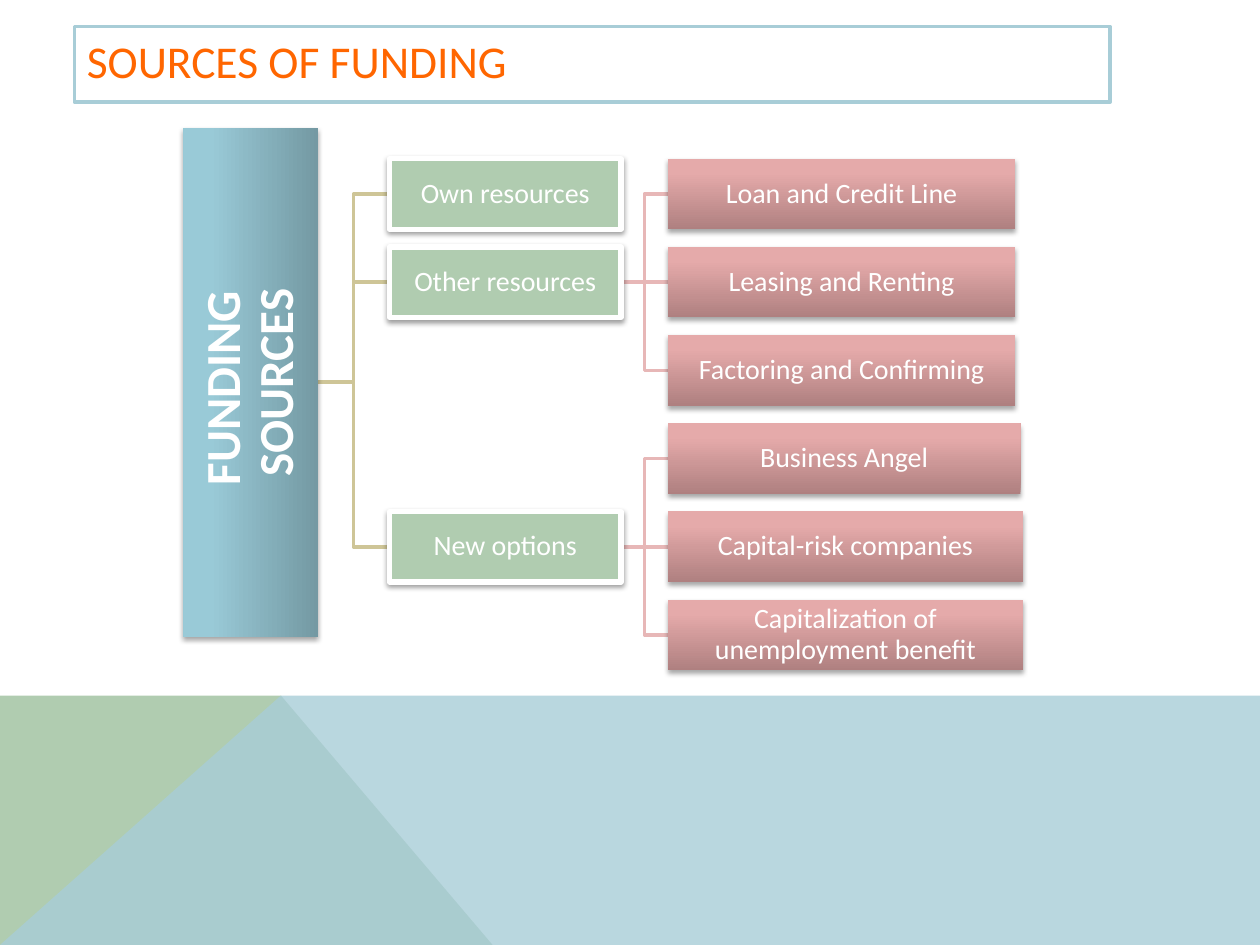
from dataclasses import dataclass

import lxml.etree
import pptx
import pptx.dml.color
import pptx.enum.shapes
import pptx.enum.text
import pptx.oxml
import pptx.oxml.ns
import pptx.util

Inches = pptx.util.Inches
Pt = pptx.util.Pt
qn = pptx.oxml.ns.qn
RECT = pptx.enum.shapes.MSO_SHAPE.RECTANGLE
LINK = pptx.enum.shapes.MSO_CONNECTOR
ALIGN = pptx.enum.text.PP_ALIGN
Stops = tuple[tuple[int, str], ...]


@dataclass(frozen=True)
class Theme:
    font: str = "Calibri"
    white: str = "FFFFFF"
    orange: str = "FF6600"
    green: str = "B0CCB0"
    blue: str = "A8CDD7"
    tan: str = "CEC597"
    pink: str = "E7B7B7"
    teal: Stops = ((0, "7499A3"), (80, "99CAD7"), (100, "99CBD9"))
    rose: Stops = ((0, "AF8080"), (80, "E5AAAA"), (100, "E8A8A8"))
    title: int = 26
    root: int = 28
    body: int = 16
    line: int = 2


@dataclass(frozen=True)
class Box:
    text: str
    row: int
    width: float


@dataclass(frozen=True)
class Group:
    box: Box
    leaves: tuple[Box, ...] = ()


THEME = Theme()
# Columns and rows of the tree
ROOT_END, ROOT_MID = 2.52, 3.03
MID_LEFT, MID_WIDTH, LEAF_LEFT = 3.09, 1.84, 5.3
TOP, STEP, HEIGHT = 1.26, 0.7, 0.56

GROUPS = (
    Group(Box("Own resources", 0, MID_WIDTH)),
    Group(Box("Other resources", 1, MID_WIDTH), (
        Box("Loan and Credit Line", 0, 2.76),
        Box("Leasing and Renting", 1, 2.76),
        Box("Factoring and Confirming", 2, 2.76))),
    Group(Box("New options", 4, MID_WIDTH), (
        Box("Business Angel", 3, 2.8),
        Box("Capital-risk companies", 4, 2.82),
        Box("Capitalization of unemployment benefit", 5, 2.82))),
)


def color(code: str) -> pptx.dml.color.RGBColor:
    return pptx.dml.color.RGBColor.from_string(code)


def paint(shape, code: str) -> None:
    shape.fill.solid()
    shape.fill.fore_color.rgb = color(code)


def blend(shape, stops: Stops) -> None:
    """Fill with a gradient that runs from bottom to top."""
    shape.fill.gradient()
    shape.fill.gradient_angle = 90
    store = shape.fill._xPr.find(".//" + qn("a:gsLst"))
    for old in list(store):
        store.remove(old)
    for pos, code in stops:
        stop = lxml.etree.SubElement(store, qn("a:gs"), pos=str(pos * 1000))
        lxml.etree.SubElement(stop, qn("a:srgbClr"), val=code)


def shade(shape, alpha: int, dist: float) -> None:
    """Add a soft shadow straight below."""
    shape.shadow.inherit = False
    store = shape._element.spPr.find(qn("a:effectLst"))
    drop = lxml.etree.SubElement(
        store, qn("a:outerShdw"), blurRad=str(Pt(3.1)), dist=str(Pt(dist)),
        dir="5400000", rotWithShape="0")
    tone = lxml.etree.SubElement(drop, qn("a:srgbClr"), val="000000")
    lxml.etree.SubElement(tone, qn("a:alpha"), val=str(alpha * 1000))


def write(shape, text: str, size: int, code: str, inset: float,
          bold: bool = False) -> None:
    frame = shape.text_frame
    frame.word_wrap = True
    frame.vertical_anchor = pptx.enum.text.MSO_ANCHOR.MIDDLE
    frame.margin_left = frame.margin_right = Inches(inset)
    frame.margin_top = frame.margin_bottom = Inches(min(inset, 0.05))
    para = frame.paragraphs[0]
    para.text = text
    para.alignment = ALIGN.CENTER
    para.line_spacing = 0.9
    for run in para.runs:
        run.font.name = THEME.font
        run.font.size = Pt(size)
        run.font.bold = bold
        run.font.color.rgb = color(code)


def block(shapes, left: float, top: float, width: float, height: float):
    shape = shapes.add_shape(
        RECT, Inches(left), Inches(top), Inches(width), Inches(height))
    shape.shadow.inherit = False
    shape.line.fill.background()
    return shape


def patch(shapes, points: list[tuple[float, float]], code: str):
    spots = [(Inches(x), Inches(y)) for x, y in points]
    pen = shapes.build_freeform(*spots[0])
    pen.add_line_segments(spots[1:], close=True)
    shape = pen.convert_to_shape()
    shape.shadow.inherit = False
    shape.line.fill.background()
    paint(shape, code)
    return shape


def row_top(row: int) -> float:
    return TOP + STEP * row


def row_mid(row: int) -> float:
    return row_top(row) + HEIGHT / 2


def join(shapes, x1: float, y1: float, x2: float, y2: float,
         code: str) -> None:
    kind = LINK.STRAIGHT if abs(y1 - y2) < 0.01 else LINK.ELBOW
    link = shapes.add_connector(
        kind, Inches(x1), Inches(y1), Inches(x2), Inches(y2))
    link.line.color.rgb = color(code)
    link.line.width = Pt(THEME.line)
    lxml.etree.SubElement(link._element.spPr, qn("a:effectLst"))


def draw_mid(shapes, box: Box) -> None:
    shape = block(shapes, MID_LEFT, row_top(box.row), box.width, HEIGHT)
    paint(shape, THEME.green)
    shape.line.color.rgb = color(THEME.white)
    shape.line.width = Pt(3)
    shade(shape, 38, 1.6)
    write(shape, box.text, THEME.body, THEME.white, 0.01)


def draw_leaf(shapes, box: Box) -> None:
    shape = block(shapes, LEAF_LEFT, row_top(box.row), box.width, HEIGHT)
    blend(shape, THEME.rose)
    shade(shape, 35, 1.8)
    write(shape, box.text, THEME.body, THEME.white, 0.01)


def main() -> None:
    deck = pptx.Presentation()
    deck.slide_width, deck.slide_height = Inches(10), Inches(7.5)
    shapes = deck.slides.add_slide(deck.slide_layouts[6]).shapes

    # Coloured ground
    patch(shapes, [(0, 7.5), (0, 5.52), (2.23, 5.52), (3.91, 7.5)],
          THEME.green)
    wash = patch(shapes, [(0, 7.5), (2.23, 5.52), (10, 5.52), (10, 7.5)],
                 THEME.blue)
    tone = wash.fill._xPr.find(".//" + qn("a:srgbClr"))
    lxml.etree.SubElement(tone, qn("a:alpha"), val="80000")

    # Title
    title = block(shapes, 0.59, 0.21, 8.22, 0.6)
    paint(title, THEME.white)
    title.line.color.rgb = color(THEME.blue)
    title.line.width = Pt(THEME.line)
    write(title, "SOURCES OF FUNDING", THEME.title, THEME.orange, 0.1)
    title.text_frame.paragraphs[0].alignment = ALIGN.LEFT

    # Links lie behind the boxes
    for group in GROUPS:
        mid = row_mid(group.box.row)
        join(shapes, ROOT_END, ROOT_MID, MID_LEFT, mid, THEME.tan)
        for leaf in group.leaves:
            join(shapes, MID_LEFT + MID_WIDTH, mid,
                 LEAF_LEFT, row_mid(leaf.row), THEME.pink)

    # Root, turned to read upwards
    root = block(shapes, -0.03, 2.5, 4.04, 1.07)
    root.rotation = 270
    blend(root, THEME.teal)
    shade(root, 35, 1.8)
    write(root, "FUNDING \nSOURCES", THEME.root, THEME.white, 0.02, True)

    # Groups and their leaves
    for group in GROUPS:
        draw_mid(shapes, group.box)
        for leaf in group.leaves:
            draw_leaf(shapes, leaf)

    deck.save("out.pptx")


if __name__ == "__main__":
    main()
